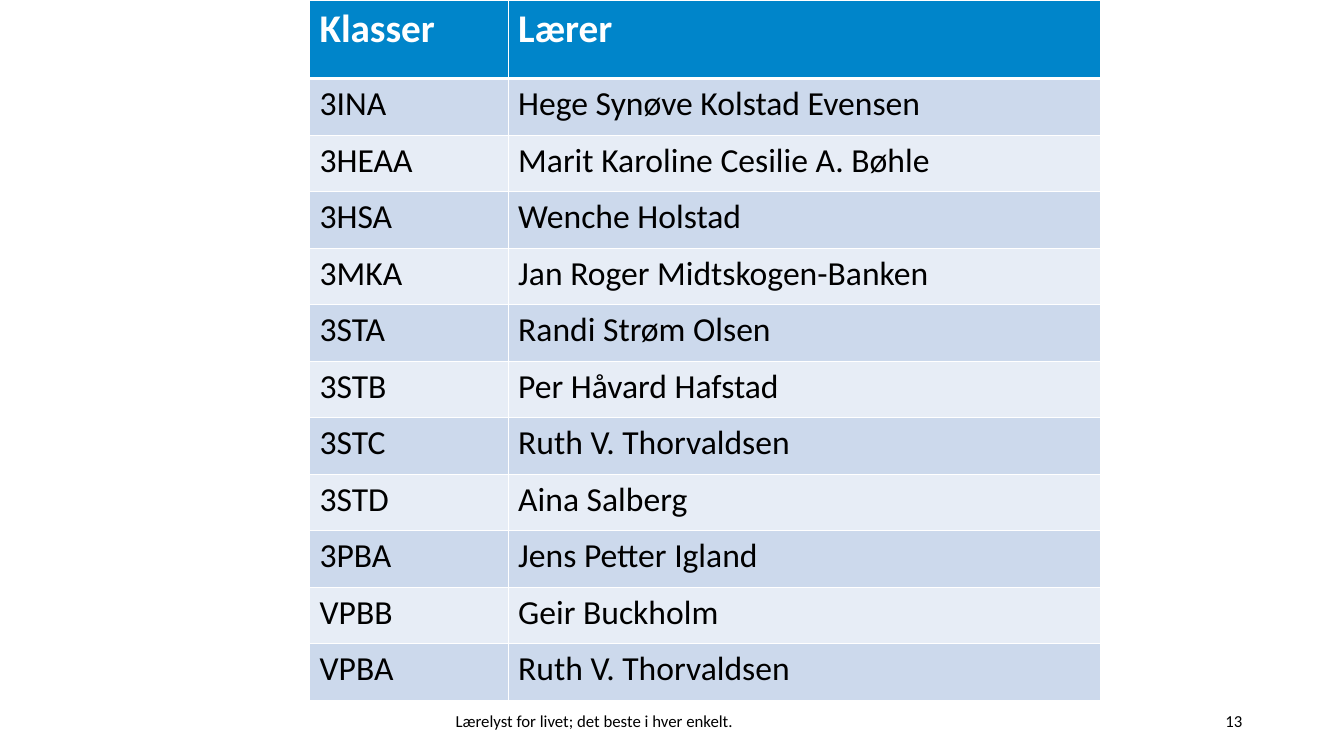
import dataclasses

import pptx
import pptx.dml.color
import pptx.enum.text
import pptx.oxml.ns
import pptx.util
from lxml import etree

Inches = pptx.util.Inches
Pt = pptx.util.Pt
Align = pptx.enum.text.PP_ALIGN
Anchor = pptx.enum.text.MSO_ANCHOR


@dataclasses.dataclass(frozen=True)
class Theme:
    font: str = "Calibri"
    head: str = "0085CA"
    bands: tuple = ("CCD9EC", "E7EDF6")
    white: str = "FFFFFF"
    black: str = "000000"
    head_size: int = 28
    body_size: int = 24
    foot_size: int = 12
    thin: int = 1
    thick: int = 3


THEME = Theme()

ROWS = [
    ("Klasser", "Lærer"),
    ("3INA", "Hege Synøve Kolstad Evensen"),
    ("3HEAA", "Marit Karoline Cesilie A. Bøhle"),
    ("3HSA", "Wenche Holstad"),
    ("3MKA", "Jan Roger Midtskogen-Banken"),
    ("3STA", "Randi Strøm Olsen"),
    ("3STB", "Per Håvard Hafstad"),
    ("3STC", "Ruth V. Thorvaldsen"),
    ("3STD", "Aina Salberg"),
    ("3PBA", "Jens Petter Igland"),
    ("VPBB", "Geir Buckholm"),
    ("VPBA", "Ruth V. Thorvaldsen"),
]


def color(code):
    return pptx.dml.color.RGBColor.from_string(code)


def write(frame, text, size, fill=THEME.black, bold=False, align=Align.LEFT):
    para = frame.paragraphs[0]
    para.alignment = align
    run = para.add_run()
    run.text = text
    run.font.name = THEME.font
    run.font.size = Pt(size)
    run.font.bold = bold
    run.font.color.rgb = color(fill)


def border(cell, **widths):
    """Draw white lines on the sides L, R, T and B, in that order."""
    qn = pptx.oxml.ns.qn
    props = cell._tc.get_or_add_tcPr()
    for side, width in widths.items():
        line = etree.SubElement(props, qn("a:ln" + side), w=str(Pt(width)))
        solid = etree.SubElement(line, qn("a:solidFill"))
        etree.SubElement(solid, qn("a:srgbClr"), val=THEME.white)


def add_list(slide, left, top, width, height):
    """Table of classes and teachers, with a taller header row."""
    shape = slide.shapes.add_table(len(ROWS), 2, Inches(left), Inches(top),
                                   Inches(width), Inches(height))
    table = shape.table
    first = 1.97
    table.columns[0].width = Inches(first)
    table.columns[1].width = Inches(width - first)
    head = 0.78
    step = (height - head) / (len(ROWS) - 1)

    for i, row in enumerate(ROWS):
        table.rows[i].height = Inches(step if i else head)
        for j, text in enumerate(row):
            cell = table.cell(i, j)
            border(cell, L=THEME.thin, R=THEME.thin,
                   T=THEME.thick if i == 1 else THEME.thin,
                   B=THEME.thick if i == 0 else THEME.thin)
            cell.fill.solid()
            if i == 0:
                cell.fill.fore_color.rgb = color(THEME.head)
                write(cell.text_frame, text, THEME.head_size,
                      fill=THEME.white, bold=True)
            else:
                cell.fill.fore_color.rgb = color(THEME.bands[(i - 1) % 2])
                write(cell.text_frame, text, THEME.body_size)


def add_foot(slide, left, top, width, height):
    """Motto at the left of the box and page number at its right."""
    motto, page = 4.5, 3
    parts = [
        ("Lærelyst for livet; det beste i hver enkelt.", left, motto, Align.LEFT),
        ("13", left + width - page, page, Align.RIGHT),
    ]
    for text, x, wide, align in parts:
        box = slide.shapes.add_textbox(Inches(x), Inches(top),
                                       Inches(wide), Inches(height))
        frame = box.text_frame
        frame.word_wrap = True
        frame.vertical_anchor = Anchor.MIDDLE
        write(frame, text, THEME.foot_size, align=align)


def main():
    deck = pptx.Presentation()
    deck.slide_width = Inches(13.33)
    deck.slide_height = Inches(7.5)
    slide = deck.slides.add_slide(deck.slide_layouts[6])
    add_list(slide, 3.07, 0, 7.85, 6.95)
    add_foot(slide, 4.42, 6.95, 8, 0.4)
    deck.save("out.pptx")


if __name__ == "__main__":
    main()
